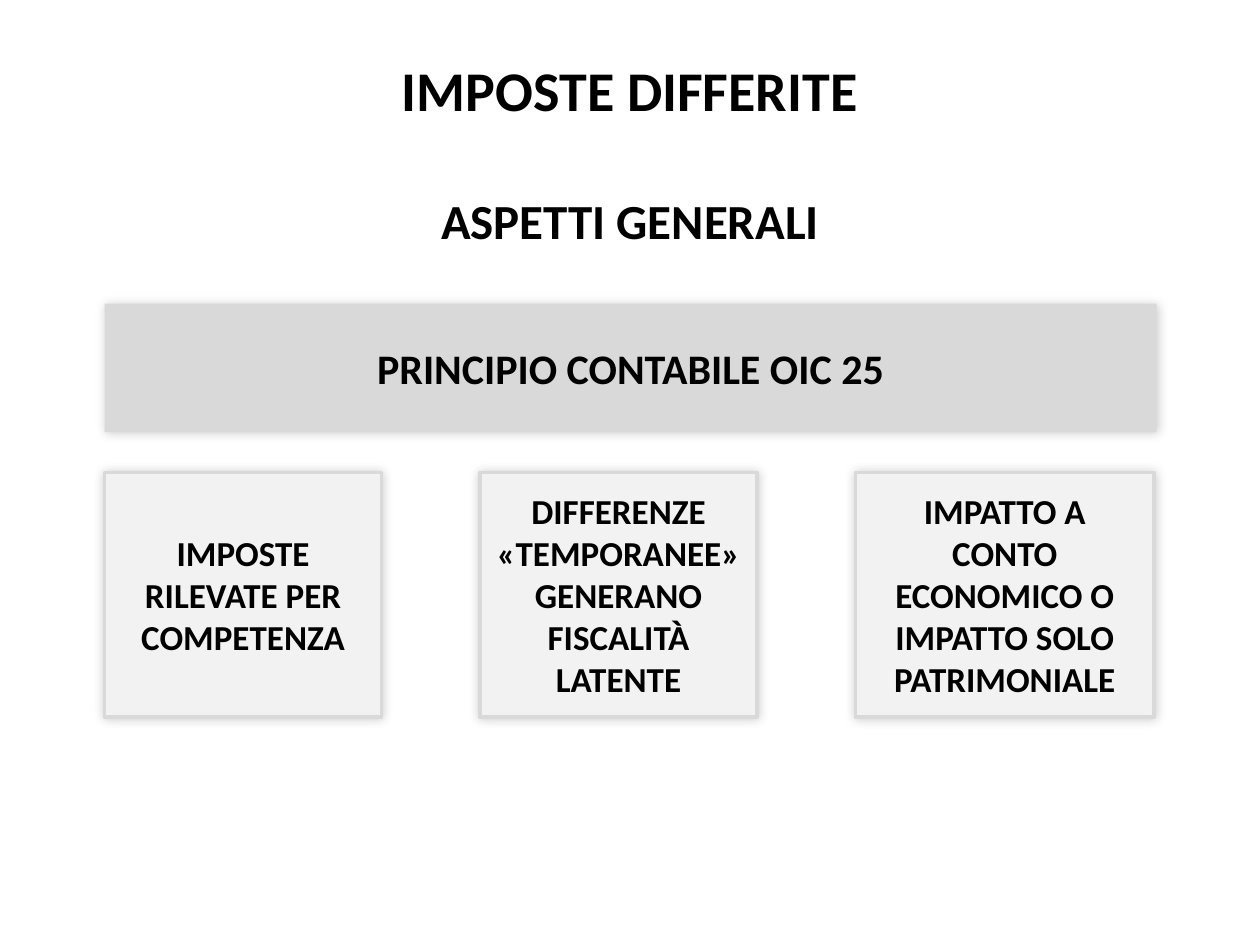
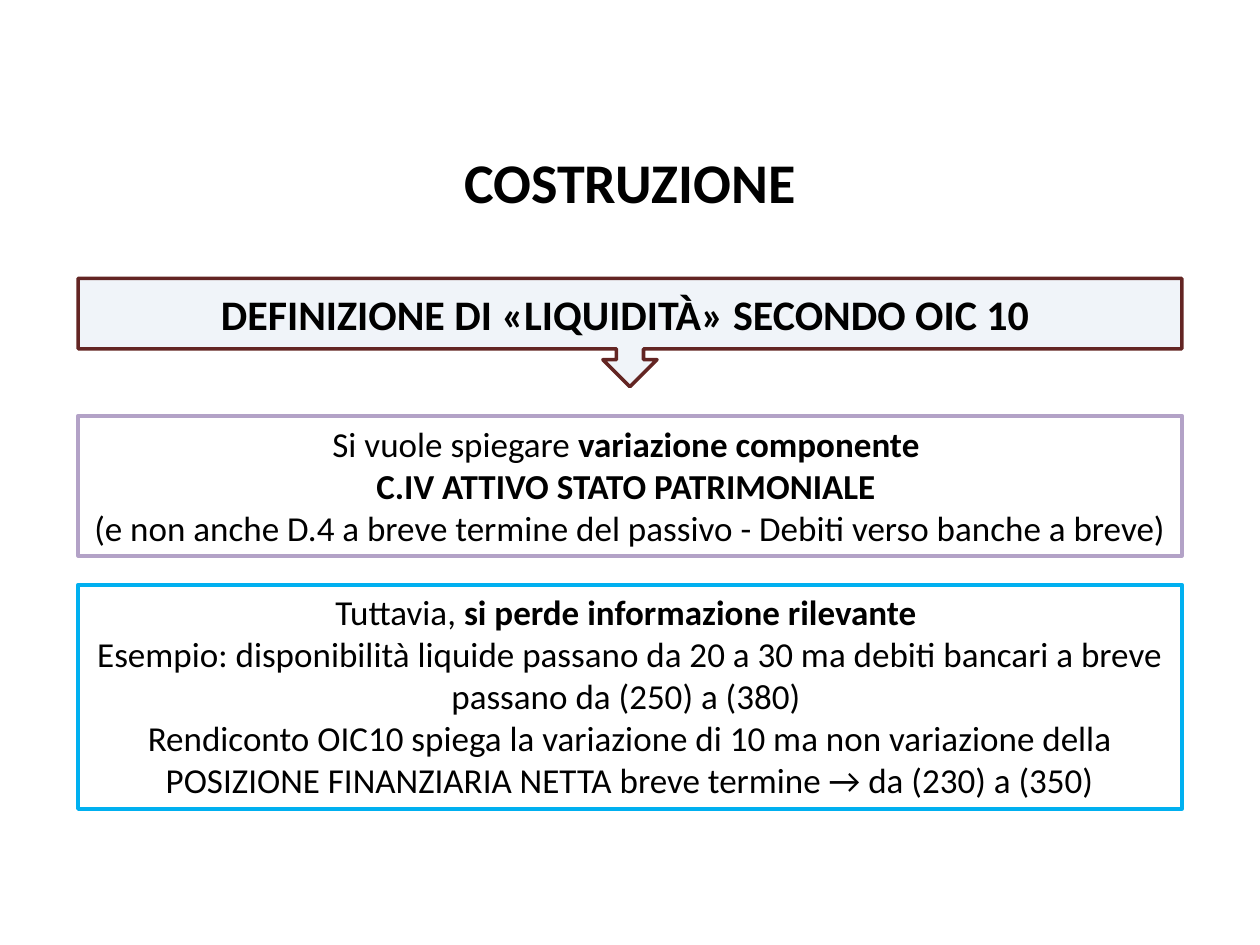
from lxml import etree
from pptx import Presentation
from pptx import util as u
from pptx.dml.color import RGBColor
from pptx.enum import shapes, text
from pptx.oxml.ns import qn

COLORS = {
    "ink": "000000",
    "paper": "FFFFFF",
    "band": "D9D9D9",
    "card": "F2F2F2",
    "callout": "DCE6F2",
    "maroon": "632523",
    "lilac": "B3A2C7",
    "sky": "00B0F0",
}
FONT = "Calibri"
COLUMNS, ROWS = 100, 75


def rgb(name):
    return RGBColor.from_string(COLORS[name])


def write(paragraph, content, size=20, bold=False, before=0):
    paragraph.alignment = text.PP_ALIGN.CENTER
    if before:
        paragraph.space_before = u.Pt(before)
    run = paragraph.add_run()
    run.text = content
    run.font.name = FONT
    run.font.size = u.Pt(size)
    run.font.bold = bold
    run.font.color.rgb = rgb("ink")


class Deck:
    def __init__(self):
        self.show = Presentation()
        self.show.slide_width = u.Inches(10)
        self.show.slide_height = u.Inches(7.5)
        self.slide = None

    def new_slide(self):
        self.slide = self.show.slides.add_slide(self.show.slide_layouts[6])

    def place(self, col, row, cols, rows):
        across = self.show.slide_width / COLUMNS
        down = self.show.slide_height / ROWS
        return [round(n) for n in (col * across, row * down, cols * across, rows * down)]

    def title(self, row, rows, heading, subheading=None):
        frame = self.slide.shapes.add_textbox(*self.place(0, row, COLUMNS, rows)).text_frame
        frame.word_wrap = True
        frame.vertical_anchor = text.MSO_ANCHOR.MIDDLE
        write(frame.paragraphs[0], heading, size=32, bold=True)
        if subheading:
            write(frame.add_paragraph(), subheading, size=28, bold=True, before=39)

    def box(self, area, fill, line=None, weight=2, kind=shapes.MSO_SHAPE.RECTANGLE):
        shape = self.slide.shapes.add_shape(kind, *self.place(*area))
        shape.shadow.inherit = False
        shape.fill.solid()
        shape.fill.fore_color.rgb = rgb(fill)
        if line:
            shape.line.color.rgb = rgb(line)
            shape.line.width = u.Pt(weight)
        else:
            shape.line.fill.background()
        shape.text_frame.word_wrap = True
        shape.text_frame.vertical_anchor = text.MSO_ANCHOR.MIDDLE
        return shape

    def soft_panel(self, area, content, fill, line=None, size=20):
        panel = self.box(area, fill, line)
        effects = panel.element.spPr.find(qn("a:effectLst"))
        glow = etree.SubElement(effects, qn("a:outerShdw"), blurRad=str(u.Pt(6)),
                                dist="0", dir="13500000", rotWithShape="0")
        tint = etree.SubElement(glow, qn("a:srgbClr"), val=COLORS["ink"])
        etree.SubElement(tint, qn("a:alpha"), val="20000")
        write(panel.text_frame.paragraphs[0], content, size=size, bold=True)

    def callout(self, area, content, opacity):
        banner = self.box(area, "callout", "maroon", kind=shapes.MSO_SHAPE.DOWN_ARROW_CALLOUT)
        tint = banner.element.spPr.find(qn("a:solidFill"))[0]
        etree.SubElement(tint, qn("a:alpha"), val=str(opacity * 1000))
        write(banner.text_frame.paragraphs[0], content, size=24, bold=True)

    def note(self, area, line, paragraphs):
        frame = self.box(area, "paper", line, weight=2.25).text_frame
        frame.vertical_anchor = text.MSO_ANCHOR.TOP
        frame.auto_size = text.MSO_AUTO_SIZE.SHAPE_TO_FIT_TEXT
        for index, pieces in enumerate(paragraphs):
            paragraph = frame.add_paragraph() if index else frame.paragraphs[0]
            for content, bold in pieces:
                write(paragraph, content, bold=bold)


def deferred_taxes(deck):
    deck.new_slide()
    left, pitch = 8.3, 29.8
    deck.soft_panel((left, 24.1, 83.5, 10.2), "PRINCIPIO CONTABILE OIC 25", "band", size=24)
    aspects = [
        ("IMPOSTE RILEVATE PER COMPETENZA", 22),
        ("DIFFERENZE «TEMPORANEE» GENERANO FISCALITÀ LATENTE", 22),
        ("IMPATTO A CONTO ECONOMICO O IMPATTO SOLO PATRIMONIALE", 23.7),
    ]
    for index, (aspect, cols) in enumerate(aspects):
        deck.soft_panel((left + index * pitch, 37.5, cols, 19.4), aspect, "card", "band")
    deck.title(7.4, 9.4, "IMPOSTE DIFFERITE", "ASPETTI GENERALI")


def construction(deck):
    deck.new_slide()
    left, cols = 6.2, 87.6
    deck.callout((left, 22.1, cols, 8.6), "DEFINIZIONE DI «LIQUIDITÀ» SECONDO OIC 10 ", opacity=41)
    deck.note((left, 33, cols, 11.1), "lilac", [
        [("Si vuole spiegare ", False), ("variazione componente ", True)],
        [("C.IV ATTIVO STATO PATRIMONIALE ", True)],
        [("(e non anche D.4 a breve termine del passivo - Debiti verso banche a breve)", False)],
    ])
    deck.note((left, 46.4, cols, 17.8), "sky", [
        [("Tuttavia, ", False), ("si perde informazione rilevante ", True)],
        [("Esempio: disponibilità liquide passano da 20 a 30 ma debiti bancari a breve "
          "passano da (250) a (380) ", False)],
        [("Rendiconto OIC10 spiega la variazione di 10 ma non variazione della "
          "POSIZIONE FINANZIARIA NETTA breve termine → da (230) a (350)", False)],
    ])
    deck.title(11.4, 6, "COSTRUZIONE")


def main():
    deck = Deck()
    deferred_taxes(deck)
    construction(deck)
    deck.show.save("out.pptx")


if __name__ == "__main__":
    main()
